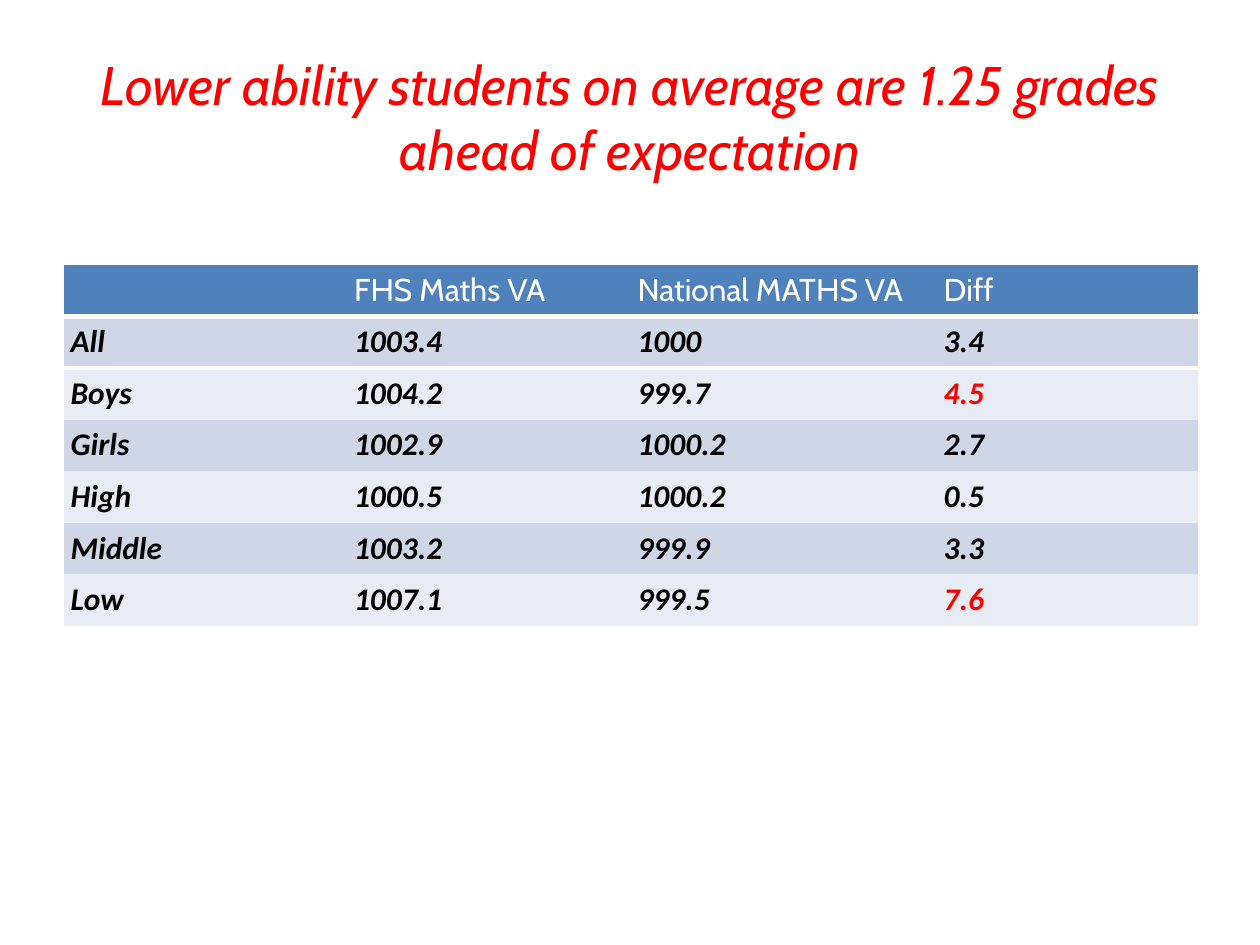
from dataclasses import dataclass

from lxml import etree
from pptx import Presentation
from pptx.dml.color import RGBColor
from pptx.enum.text import MSO_ANCHOR, PP_ALIGN
from pptx.oxml.ns import qn
from pptx.util import Inches, Pt

CENTER = PP_ALIGN.CENTER
MIDDLE = MSO_ANCHOR.MIDDLE
PLAIN_TABLE_STYLE = "{2D5ABB26-0587-4C30-8999-92F81FD0307C}"
BLANK_LAYOUT = 6


@dataclass(frozen=True)
class Theme:
    accent: str = "FF0000"
    ink: str = "000000"
    paper: str = "FFFFFF"
    header: str = "4F81BD"
    bands: tuple = ("CFD7E7", "E8ECF4")
    heading_font: str = "Cabin"
    body_font: str = "Calibri"
    title_size: float = 31
    table_size: float = 18
    rule_width: float = 3


THEME = Theme()
SLIDE_WIDTH, SLIDE_HEIGHT = 10, 7.5
MARGIN = 0.05 * SLIDE_WIDTH
CONTENT_WIDTH = SLIDE_WIDTH - 2 * MARGIN
TABLE_LEFT, TABLE_TOP = 0.51, 0.28 * SLIDE_HEIGHT
COLUMN_SHARES = (0.25, 0.25, 0.27, 0.23)
ROW_HEIGHT = 0.41
CELL_INSET = 0.05

TITLE = "Lower ability students on average are 1.25 grades ahead of expectation"
HEADINGS = ("", "FHS Maths VA", "National MATHS VA", "Diff")
RESULTS = (
    ("All", "1003.4", "1000", "3.4"),
    ("Boys", "1004.2", "999.7", "4.5"),
    ("Girls", "1002.9", "1000.2", "2.7"),
    ("High", "1000.5", "1000.2", "0.5"),
    ("Middle", "1003.2", "999.9", "3.3"),
    ("Low", "1007.1", "999.5", "7.6"),
)
HIGHLIGHTS = {"4.5", "7.6"}


def write_text(frame, text, *, font, size, color, bold=False, italic=False, align=None):
    para = frame.paragraphs[0]
    para.alignment = align
    if not text:
        return
    span = para.add_run()
    span.text = text
    span.font.name = font
    span.font.size = Pt(size)
    span.font.bold = bold
    span.font.italic = italic
    span.font.color.rgb = RGBColor.from_string(color)


def add_title(page):
    box = page.shapes.add_textbox(
        Inches(MARGIN), Inches(0.04 * SLIDE_HEIGHT),
        Inches(CONTENT_WIDTH), Inches(SLIDE_HEIGHT / 6),
    )
    frame = box.text_frame
    frame.word_wrap = True
    frame.vertical_anchor = MIDDLE
    write_text(frame, TITLE, font=THEME.heading_font, size=THEME.title_size,
               color=THEME.accent, italic=True, align=CENTER)


def add_border(cell, side):
    line = etree.Element(qn(f"a:{side}"), w=str(Pt(THEME.rule_width)))
    fill = etree.SubElement(line, qn("a:solidFill"))
    etree.SubElement(fill, qn("a:srgbClr"), val=THEME.paper)
    cell._tc.get_or_add_tcPr().insert(0, line)


def fill_cell(cell, text, fill, **text_format):
    cell.margin_left = cell.margin_right = Inches(CELL_INSET)
    cell.margin_top = cell.margin_bottom = Inches(CELL_INSET)
    cell.fill.solid()
    cell.fill.fore_color.rgb = RGBColor.from_string(fill)
    write_text(cell.text_frame, text, size=THEME.table_size, **text_format)


def add_results_table(page):
    row_count = len(RESULTS) + 1
    table = page.shapes.add_table(
        row_count, len(HEADINGS), Inches(TABLE_LEFT), Inches(TABLE_TOP),
        Inches(CONTENT_WIDTH), Inches(ROW_HEIGHT * row_count),
    ).table
    table._tbl.tblPr.find(qn("a:tableStyleId")).text = PLAIN_TABLE_STYLE
    table.horz_banding = False
    for column, share in zip(table.columns, COLUMN_SHARES):
        column.width = Inches(CONTENT_WIDTH * share)
    for index, heading in enumerate(HEADINGS):
        fill_cell(table.cell(0, index), heading, THEME.header,
                  font=THEME.heading_font, color=THEME.paper)
        add_border(table.cell(0, index), "lnB")
        add_border(table.cell(1, index), "lnT")
    for row, values in enumerate(RESULTS, start=1):
        band = THEME.bands[(row - 1) % 2]
        for index, value in enumerate(values):
            color = THEME.accent if value in HIGHLIGHTS else THEME.ink
            fill_cell(table.cell(row, index), value, band,
                      font=THEME.body_font, color=color, bold=True, italic=True)


def main():
    deck = Presentation()
    deck.slide_width = Inches(SLIDE_WIDTH)
    deck.slide_height = Inches(SLIDE_HEIGHT)
    page = deck.slides.add_slide(deck.slide_layouts[BLANK_LAYOUT])
    add_title(page)
    add_results_table(page)
    deck.save("out.pptx")


if __name__ == "__main__":
    main()
